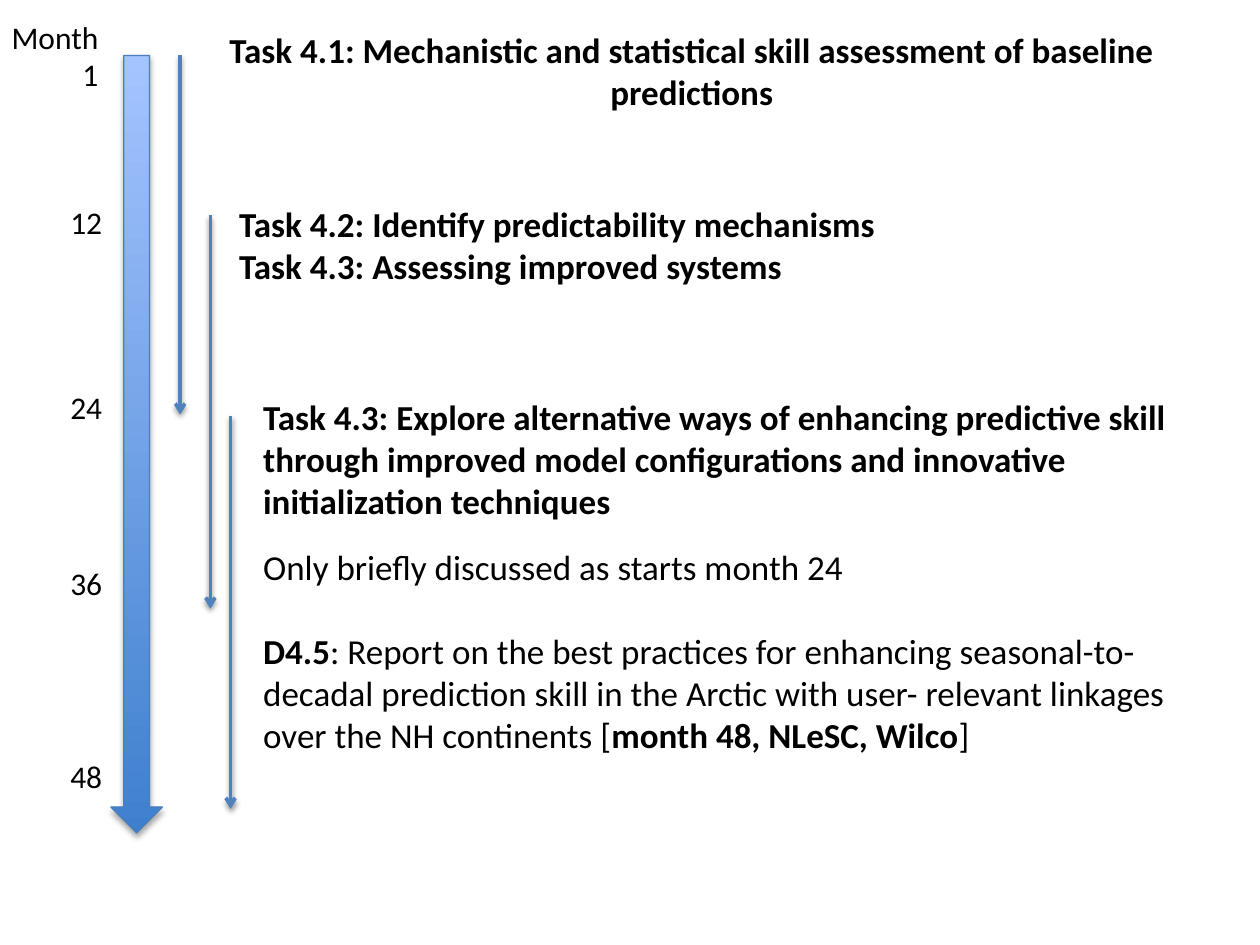
import pptx
import pptx.util
import pptx.dml.color
import pptx.enum.shapes
import pptx.enum.text
import pptx.oxml
import pptx.oxml.ns

Inches = pptx.util.Inches
Pt = pptx.util.Pt
ALIGN = pptx.enum.text.PP_ALIGN
COLORS = {"text": "000000", "deep": "3F80CE", "pale": "A4C4FF",
          "edge": "4B7EBC", "line": "4F81BD"}


def color(name):
    """Return the named colour."""
    return pptx.dml.color.RGBColor.from_string(COLORS[name])


def shade(shape, alpha, dist):
    """Give a shape a soft shadow that falls straight down."""
    shape._element.spPr.append(pptx.oxml.parse_xml(
        f'<a:effectLst {pptx.oxml.ns.nsdecls("a")}>'
        f'<a:outerShdw blurRad="{Pt(3.1)}" dist="{Pt(dist)}" dir="5400000" rotWithShape="0">'
        f'<a:srgbClr val="000000"><a:alpha val="{alpha * 1000}"/></a:srgbClr>'
        '</a:outerShdw></a:effectLst>'))


def write(slide, box, paras, size=20, align=ALIGN.LEFT, wrap=True, gap=0):
    """Place paragraphs, each a list of (words, bold) runs, in a text box."""
    frame = slide.shapes.add_textbox(*map(Inches, box)).text_frame
    frame.word_wrap = wrap
    for i, runs in enumerate(paras):
        para = frame.add_paragraph() if i else frame.paragraphs[0]
        para.alignment = align
        para.space_before = Pt(gap if i else 0)
        for words, bold in runs:
            run = para.add_run()
            run.text = words
            run.font.name = "Calibri"
            run.font.size = Pt(size)
            run.font.bold = bold
            run.font.color.rgb = color("text")


def draw_axis(slide, box):
    """Draw the month arrow with its labels on the left."""
    left, top, width, height = box
    arrow = slide.shapes.add_shape(
        pptx.enum.shapes.MSO_SHAPE.DOWN_ARROW, *map(Inches, box))
    arrow.fill.gradient()
    arrow.fill.gradient_angle = 90
    for stop, name in zip(arrow.fill.gradient_stops, ("deep", "pale")):
        stop.color.rgb = color(name)
    arrow.line.color.rgb = color("edge")
    arrow.line.width = Pt(0.75)
    shade(arrow, 35, 1.8)
    write(slide, (left - 0.9, top - 0.35, 0.9, 0.71),
          [[("Month", False)], [("1", False)]], 18, ALIGN.RIGHT, False)
    for month, drop in ((12, 1.12), (24, 2.59), (36, 3.99), (48, 5.52)):
        write(slide, (left - 0.42, top + drop, 0.46, 0.4),
              [[(str(month), False)]], 18, wrap=False)


def draw_spans(slide, box):
    """Draw the arrows that show how long each task runs."""
    left, top = box[:2]
    for dx, start, end in ((0, 0, 2.85), (0.24, 1.27, 4.39), (0.4, 2.86, 5.98)):
        x = Inches(left + dx)
        span = slide.shapes.add_connector(
            pptx.enum.shapes.MSO_CONNECTOR.STRAIGHT,
            x, Inches(top + start), x, Inches(top + end))
        span.line.color.rgb = color("line")
        span.line.width = Pt(2)
        span.line._get_or_add_ln().append(pptx.oxml.parse_xml(
            f'<a:tailEnd {pptx.oxml.ns.nsdecls("a")} type="arrow"/>'))
        shade(span, 38, 1.6)


def draw_tasks(slide, box):
    """Write the tasks and the deliverable."""
    left, top = box[:2]
    write(slide, (left, top, 8, 0.77), [[(
        "Task 4.1: Mechanistic and statistical skill assessment of baseline predictions",
        True)]], align=ALIGN.CENTER)
    write(slide, (left + 0.31, top + 1.38, 8.2, 0.77), [
        [("Task 4.2: Identify predictability mechanisms", True)],
        [("Task 4.3: Assessing improved systems", True)]])
    write(slide, (left + 0.5, top + 2.91, 7.89, 1.11), [
        [("Task 4.3: Explore alternative ways of enhancing predictive skill", True)],
        [("through improved model configurations and innovative "
          "initialization techniques", True)]])
    write(slide, (left + 0.5, top + 4.1, 7.78, 2.09), [
        [("Only briefly discussed as starts month 24", False)],
        [("D4.5", True),
         (": Report on the best practices for enhancing seasonal-to-decadal "
          "prediction skill in the Arctic with user- relevant linkages over "
          "the NH continents [", False),
         ("month 48, NLeSC, Wilco", True), ("]", False)]], gap=24)


def main():
    """Build and save the slide."""
    deck = pptx.Presentation()
    deck.slide_width, deck.slide_height = Inches(10), Inches(7.5)
    slide = deck.slides.add_slide(deck.slide_layouts[6])
    draw_axis(slide, (0.88, 0.44, 0.41, 6.17))
    draw_spans(slide, (1.43, 0.44, 0.4, 5.98))
    draw_tasks(slide, (1.49, 0.18, 8.51, 6.19))
    deck.save("out.pptx")


if __name__ == "__main__":
    main()
